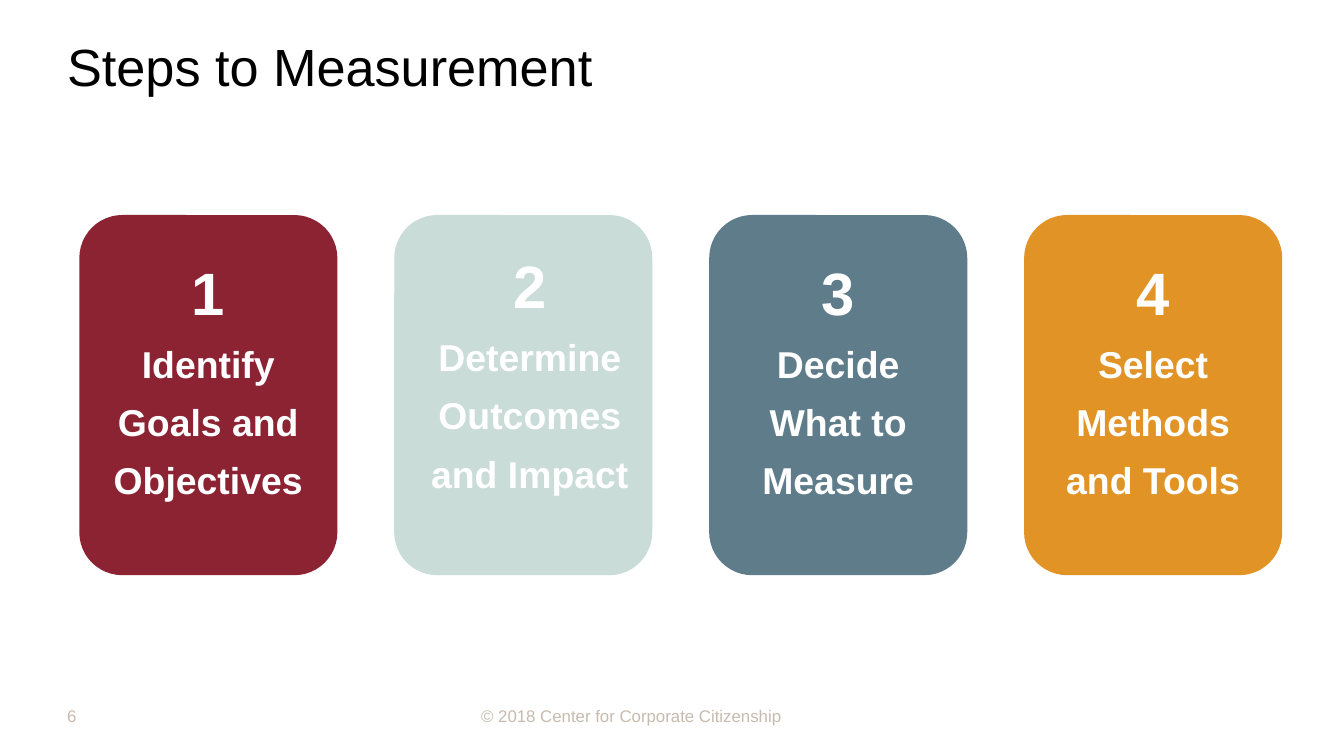
from dataclasses import dataclass

from pptx import Presentation
from pptx.dml.color import RGBColor
from pptx.enum import shapes, text
from pptx.util import Inches, Pt

FONT = "Arial"
BLACK = RGBColor(0x00, 0x00, 0x00)
WHITE = RGBColor(0xFF, 0xFF, 0xFF)
TAUPE = RGBColor(0xC6, 0xBB, 0xAE)
MAROON = RGBColor(0x8C, 0x23, 0x32)
MINT = RGBColor(0xCA, 0xDC, 0xD7)
SLATE = RGBColor(0x5E, 0x7C, 0x8A)
AMBER = RGBColor(0xE2, 0x93, 0x26)

SLIDE_WIDTH = 10
SLIDE_HEIGHT = SLIDE_WIDTH * 9 / 16
FIRST_CARD_LEFT, LAST_CARD_LEFT = 0.59, 7.62
CARD_TOP, CARD_WIDTH, CARD_HEIGHT = 1.6, 1.92, 2.68
FOOTER_TOP, FOOTER_HEIGHT = 5.18, 0.3


@dataclass(frozen=True)
class Step:
    label: str
    color: RGBColor
    # left, top, right, bottom
    insets: tuple[float, float, float, float] = (0.1, 0.05, 0.1, 0.05)


@dataclass(frozen=True)
class Caption:
    wording: str
    left: float
    top: float
    width: float
    height: float
    size: float
    color: RGBColor


STEPS = [
    Step("Identify Goals and Objectives", MAROON),
    Step("Determine Outcomes and Impact", MINT, (0.1, 0, 0, 0)),
    Step("Decide What to Measure", SLATE),
    Step("Select Methods and Tools", AMBER),
]
CARD_PITCH = (LAST_CARD_LEFT - FIRST_CARD_LEFT) / (len(STEPS) - 1)

CAPTIONS = [
    Caption("© 2018 Center for Corporate Citizenship",
            3.58, FOOTER_TOP, 2.28, FOOTER_HEIGHT, 9, TAUPE),
    Caption("Steps to Measurement", 0.5, 0.08, 9.5, 0.81, 28, BLACK),
    Caption("6", 0.5, FOOTER_TOP, 2.33, FOOTER_HEIGHT, 9, TAUPE),
]


def set_insets(frame, left: float, top: float, right: float, bottom: float) -> None:
    frame.margin_left, frame.margin_top = Inches(left), Inches(top)
    frame.margin_right, frame.margin_bottom = Inches(right), Inches(bottom)


def style_runs(paragraph, size: float, color: RGBColor, bold: bool = False) -> None:
    for run in paragraph.runs:
        run.font.name = FONT
        run.font.size = Pt(size)
        run.font.bold = bold
        run.font.color.rgb = color


def add_caption(slide, caption: Caption) -> None:
    box = slide.shapes.add_textbox(Inches(caption.left), Inches(caption.top),
                                   Inches(caption.width), Inches(caption.height))
    frame = box.text_frame
    frame.word_wrap = True
    frame.vertical_anchor = text.MSO_ANCHOR.MIDDLE
    set_insets(frame, 0, 0, 0, 0)
    frame.text = caption.wording
    style_runs(frame.paragraphs[0], caption.size, caption.color)


def add_step_card(slide, number: int, step: Step) -> None:
    left = FIRST_CARD_LEFT + (number - 1) * CARD_PITCH
    card = slide.shapes.add_shape(
        shapes.MSO_SHAPE.ROUNDED_RECTANGLE, Inches(left), Inches(CARD_TOP),
        Inches(CARD_WIDTH), Inches(CARD_HEIGHT))
    card.shadow.inherit = False
    card.fill.solid()
    card.fill.fore_color.rgb = step.color
    card.line.fill.background()

    frame = card.text_frame
    frame.word_wrap = True
    frame.vertical_anchor = text.MSO_ANCHOR.TOP
    set_insets(frame, *step.insets)
    frame.text = f"{number}\n{step.label}"
    for paragraph, size in zip(frame.paragraphs, (32, 20)):
        paragraph.alignment = text.PP_ALIGN.CENTER
        paragraph.line_spacing = 1.3
        style_runs(paragraph, size, WHITE, bold=True)


def main() -> None:
    deck = Presentation()
    deck.slide_width, deck.slide_height = Inches(SLIDE_WIDTH), Inches(SLIDE_HEIGHT)
    slide = deck.slides.add_slide(deck.slide_layouts[6])
    for caption in CAPTIONS:
        add_caption(slide, caption)
    for number, step in enumerate(STEPS, start=1):
        add_step_card(slide, number, step)
    deck.save("out.pptx")


if __name__ == "__main__":
    main()
